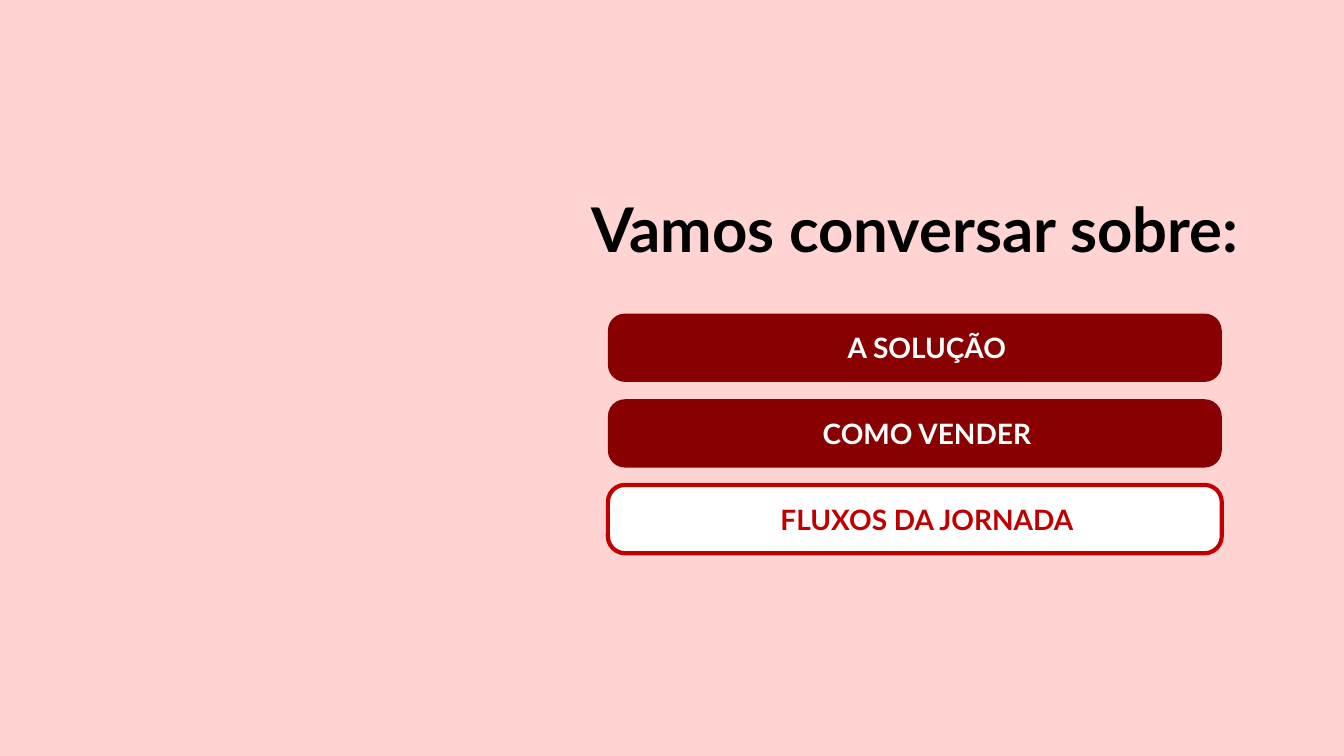
from dataclasses import dataclass
from typing import Optional

from pptx import Presentation
from pptx.dml.color import RGBColor
from pptx.enum.shapes import MSO_SHAPE
from pptx.enum.text import MSO_ANCHOR, MSO_AUTO_SIZE, PP_ALIGN
from pptx.slide import Slide
from pptx.text.text import TextFrame
from pptx.util import Pt

LEFT, TOP, WIDTH, HEIGHT = 434.2, 224, 438.5, 48.8
STEP = 61.2
INDENT = 17.3


@dataclass
class Topic:
    label: str
    fill: str = "880000"
    ink: str = "FFFFFF"
    edge: Optional[str] = None


TOPICS = [
    Topic("A SOLUÇÃO"),
    Topic("COMO VENDER"),
    Topic("FLUXOS DA JORNADA", "FFFFFF", "C00000", "C00000"),
]


def paint(target, tone: str) -> None:
    target.solid()
    target.fore_color.rgb = RGBColor.from_string(tone)


def write(frame: TextFrame, text: str, size: float, ink: str, indent: float = 0) -> None:
    frame.word_wrap = True
    line = frame.paragraphs[0]
    line.text = text
    line.alignment = PP_ALIGN.CENTER
    if indent:
        line._p.get_or_add_pPr().set("marL", str(Pt(indent)))
    for run in line.runs:
        run.font.name = "Lato"
        run.font.size = Pt(size)
        run.font.bold = True
        paint(run.font.fill, ink)


def add_topic(slide: Slide, topic: Topic, top: float) -> None:
    bar = slide.shapes.add_shape(
        MSO_SHAPE.ROUNDED_RECTANGLE, Pt(LEFT), Pt(top), Pt(WIDTH), Pt(HEIGHT)
    )
    bar.adjustments[0] = 0.25
    bar.shadow.inherit = False
    paint(bar.fill, topic.fill)
    if topic.edge:
        paint(bar.line.fill, topic.edge)
        bar.line.width = Pt(3)
    else:
        bar.line.fill.background()
    bar.text_frame.vertical_anchor = MSO_ANCHOR.MIDDLE
    write(bar.text_frame, topic.label, 20, topic.ink, INDENT)


def add_title(slide: Slide, text: str) -> None:
    box = slide.shapes.add_textbox(Pt(378), Pt(133.2), Pt(551.5), Pt(60.5))
    write(box.text_frame, text, 44, "000000")
    box.text_frame.auto_size = MSO_AUTO_SIZE.SHAPE_TO_FIT_TEXT


def main() -> None:
    deck = Presentation()
    deck.slide_width, deck.slide_height = Pt(960), Pt(540)
    slide = deck.slides.add_slide(deck.slide_layouts[6])
    paint(slide.background.fill, "FFD4D3")
    for row, topic in enumerate(TOPICS):
        add_topic(slide, topic, TOP + row * STEP)
    add_title(slide, "Vamos conversar sobre:")
    deck.save("out.pptx")


if __name__ == "__main__":
    main()
